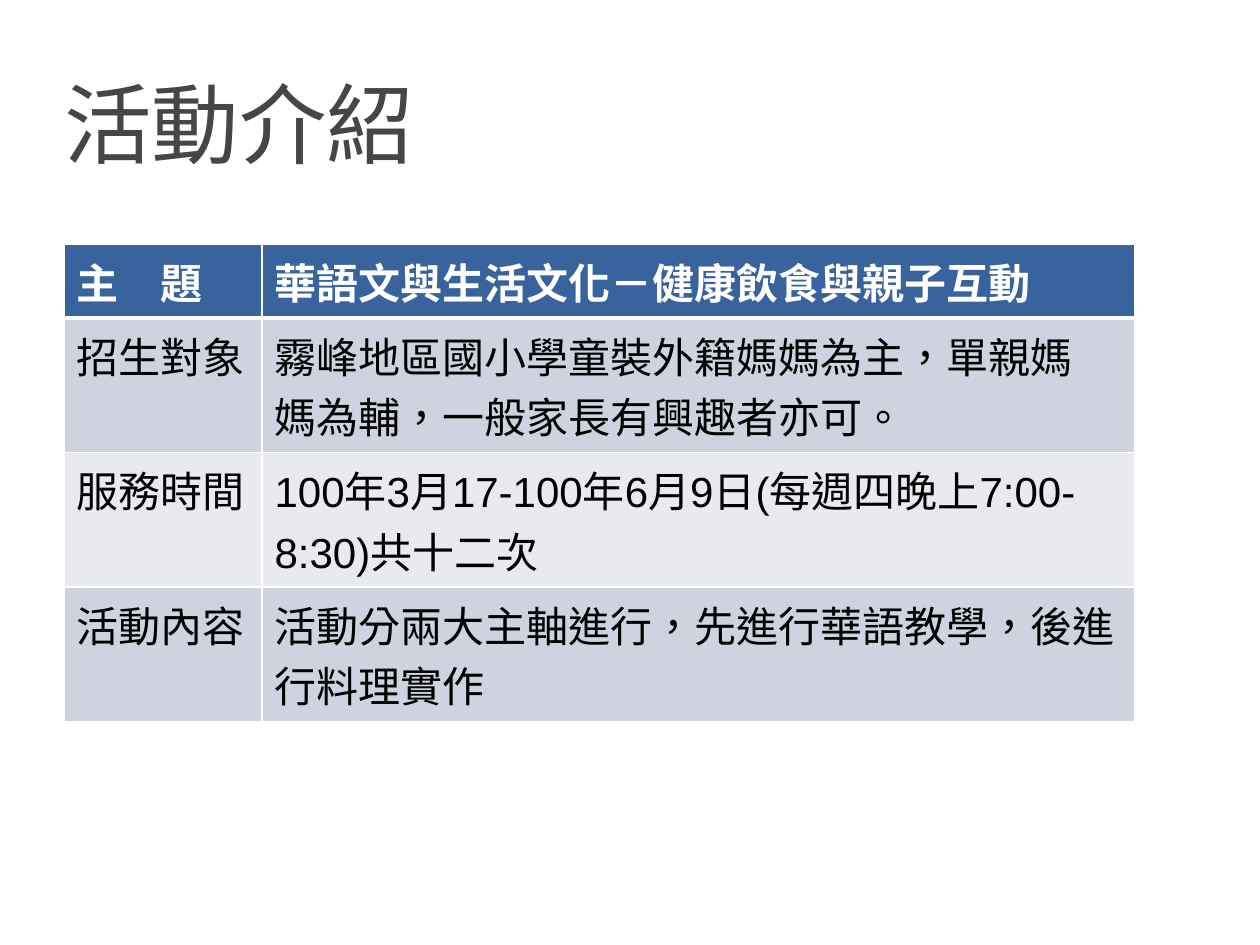
from lxml.etree import SubElement
from pptx import Presentation
from pptx.dml.color import RGBColor
from pptx.enum.lang import MSO_LANGUAGE_ID
from pptx.enum.text import MSO_ANCHOR, PP_ALIGN
from pptx.oxml.ns import qn
from pptx.util import Pt

COLORS = {
    "title": "464646",
    "header": "39639D",
    "odd_row": "CED3DF",
    "even_row": "E8EAEF",
    "white": "FFFFFF",
    "black": "000000",
}
LEFT = Pt(36.72)
COLUMN_WIDTHS = [113, 499]
ROW_HEIGHTS = [39.6, 70.6, 54, 54]
ROWS = [
    ("主　題", "華語文與生活文化－健康飲食與親子互動"),
    ("招生對象", "霧峰地區國小學童裝外籍媽媽為主，單親媽\n媽為輔，一般家長有興趣者亦可。"),
    ("服務時間", "100年3月17-100年6月9日(每週四晚上7:00-8:30)共十二次"),
    ("活動內容", "活動分兩大主軸進行，先進行華語教學，後進行料理實作"),
]


def color(name):
    return RGBColor.from_string(COLORS[name])


def format_text(text_frame, font_name, size, color_name, bold=False):
    for paragraph in text_frame.paragraphs:
        paragraph.alignment = PP_ALIGN.LEFT
        font = paragraph.font
        font.name, font.size, font.bold = font_name, Pt(size), bold
        font.color.rgb = color(color_name)
        for run in paragraph.runs:
            run.font.language_id = MSO_LANGUAGE_ID.TRADITIONAL_CHINESE


def add_title(slide, text):
    title = slide.shapes.title
    title.left, title.top, title.width, title.height = LEFT, Pt(37.44), Pt(648), Pt(62.64)
    text_frame = title.text_frame
    text_frame.text = text
    text_frame.vertical_anchor = MSO_ANCHOR.BOTTOM
    text_frame.margin_left = text_frame.margin_right = text_frame.margin_bottom = 0
    text_frame.margin_top = Pt(3.6)
    format_text(text_frame, "Calibri", 50, "title")


def add_borders(cell, bottom_width, top_width):
    """Draw white borders; call before the fill, which must follow them in the XML."""
    properties = cell._tc.get_or_add_tcPr()
    widths = {"a:lnL": 1, "a:lnR": 1, "a:lnT": top_width, "a:lnB": bottom_width}
    for tag, width in widths.items():
        line = SubElement(properties, qn(tag), w=str(Pt(width)))
        fill = SubElement(line, qn("a:solidFill"))
        SubElement(fill, qn("a:srgbClr"), val=COLORS["white"])


def fill_cell(cell, text, row_index, font_name):
    is_header = row_index == 0
    add_borders(cell, 3 if is_header else 1, 3 if row_index == 1 else 1)
    cell.fill.solid()
    band = "odd_row" if row_index % 2 else "even_row"
    cell.fill.fore_color.rgb = color("header" if is_header else band)
    cell.text = text
    text_color = "white" if is_header else "black"
    format_text(cell.text_frame, font_name, 24, text_color, is_header)


def add_activity_table(slide):
    frame = slide.shapes.add_table(
        len(ROWS), len(COLUMN_WIDTHS), LEFT, Pt(139.68),
        Pt(sum(COLUMN_WIDTHS)), Pt(sum(ROW_HEIGHTS)))
    table = frame.table
    for column, width in zip(table.columns, COLUMN_WIDTHS):
        column.width = Pt(width)
    for row_index, texts in enumerate(ROWS):
        row = table.rows[row_index]
        row.height = Pt(ROW_HEIGHTS[row_index])
        font_name = "Times New Roman" if row_index == len(ROWS) - 1 else "Arial"
        for cell, text in zip(row.cells, texts):
            fill_cell(cell, text, row_index, font_name)


def main():
    presentation = Presentation()
    presentation.slide_width, presentation.slide_height = Pt(720), Pt(540)
    slide = presentation.slides.add_slide(presentation.slide_layouts[5])
    add_title(slide, "活動介紹")
    add_activity_table(slide)
    presentation.save("out.pptx")


if __name__ == "__main__":
    main()
